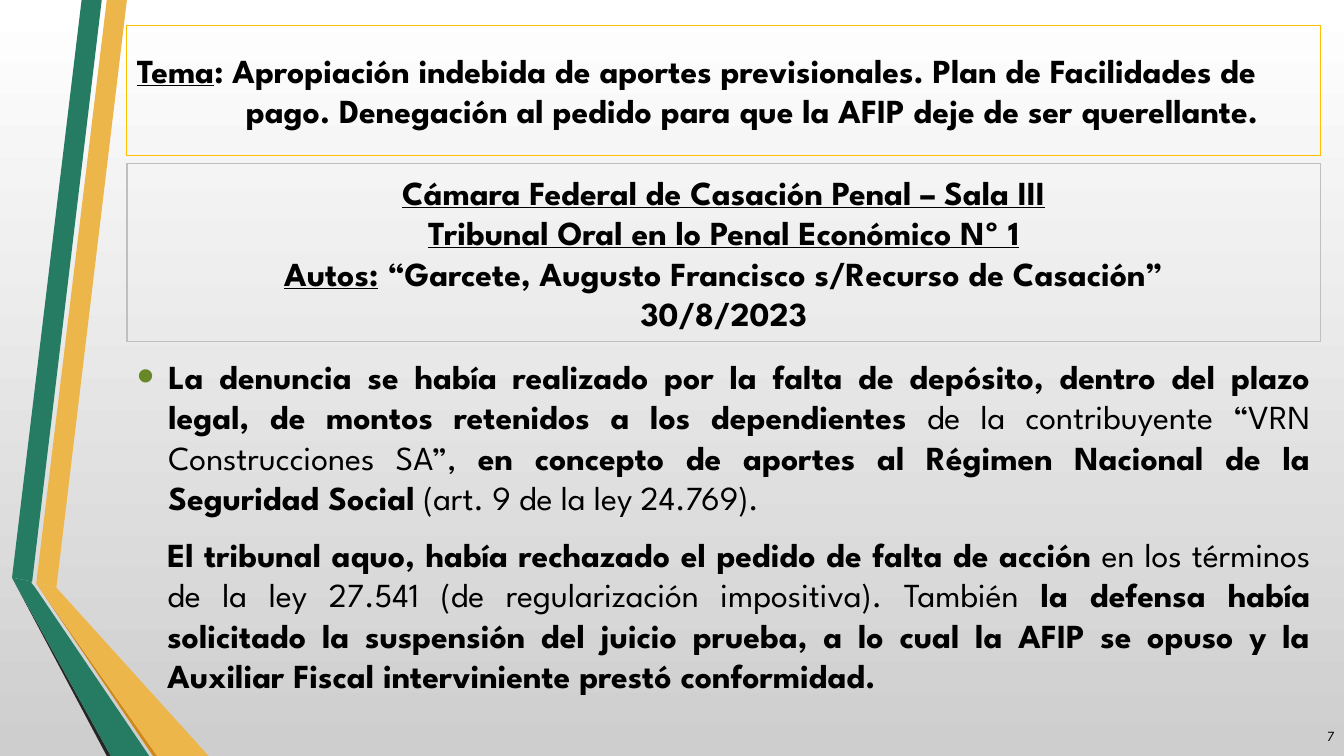
"""Build the court ruling slide with its side ribbons, topic, case heading and facts."""
from lxml import etree
from pptx import Presentation
from pptx.dml.color import RGBColor
from pptx.enum import shapes, text
from pptx.oxml import ns
from pptx.util import Pt

FONT = "League Spartan"
BLACK, AMBER, GREEN = "000000", "ECB64A", "267C62"
BACKGROUND = ["FFFFFF", "CECECE"]
LEFT, WIDTH = 90.7, 852.5

TOPIC = [[
    ("Tema", "bu"),
    (": Apropiación indebida de aportes previsionales. Plan de Facilidades de pago. "
     "Denegación al pedido para que la AFIP deje de ser querellante.", "b"),
]]
CASE = [
    [("Cámara Federal de Casación Penal – Sala III", "bu")],
    [("Tribunal Oral en lo Penal Económico Nº 1", "bu")],
    [("Autos:", "bu"), (" “Garcete, Augusto Francisco s/Recurso de Casación”", "b")],
    [("30/8/2023", "b")],
]
FACTS = [
    [("La denuncia se había realizado por la falta de depósito, dentro del plazo legal, "
      "de montos retenidos a los dependientes", "b"),
     (" de la contribuyente “VRN Construcciones SA”, ", ""),
     ("en concepto de aportes al Régimen Nacional de la Seguridad Social", "b"),
     (" (art. 9 de la ley 24.769).", "")],
    [("El tribunal aquo, había rechazado el pedido de falta de acción", "b"),
     (" en los términos de la ley 27.541 (de regularización impositiva). También ", ""),
     ("la defensa había solicitado la suspensión del juicio prueba, a lo cual la AFIP "
      "se opuso y la Auxiliar Fiscal interviniente prestó conformidad.", "b")],
]
PAGE = [[("7", "")]]

RIBBONS = [
    (AMBER, [(26, 416.2), (40.3, 419.8), (90.7, 0), (76.3, 0)]),
    (GREEN, [(72.7, 0), (58.3, 0), (8.6, 412.6), (23, 415.4)]),
    ("262626", [(8.6, 412.6), (76.3, 540), (79.2, 540)]),
    ("D18817", [(26, 416.9), (109.4, 540), (112.3, 540)]),
    (AMBER, [(26, 416.9), (112.3, 540), (149, 540), (40.3, 419.8), (26, 416.2)]),
    (GREEN, [(106.6, 540), (25.2, 419.8), (22.3, 416.2), (23, 415.4),
             (8.6, 412.6), (79.2, 540)]),
]


def color(value):
    return RGBColor.from_string(value)


def place(part, left, top, width, height):
    part.left, part.top, part.width, part.height = map(Pt, (left, top, width, height))


def write(part, paragraphs, align, anchor, size=24):
    frame = part.text_frame
    frame.word_wrap = True
    frame.auto_size = text.MSO_AUTO_SIZE.NONE
    frame.vertical_anchor = anchor
    for number, pieces in enumerate(paragraphs):
        paragraph = frame.add_paragraph() if number else frame.paragraphs[0]
        paragraph.alignment = align
        paragraph.space_before = Pt(0)
        for words, style in pieces:
            run = paragraph.add_run()
            run.text = words
            run.font.name, run.font.size = FONT, Pt(size)
            run.font.bold, run.font.underline = "b" in style, "u" in style
            run.font.color.rgb = color(BLACK)
    return frame.paragraphs


def indent(paragraph, margin, first):
    properties = paragraph._p.get_or_add_pPr()
    properties.set("marL", str(Pt(margin)))
    properties.set("indent", str(Pt(first)))
    return properties


def add(parent, tag, **attributes):
    return etree.SubElement(parent, ns.qn(tag), attributes)


def outline(part, value):
    part.line.color.rgb = color(value)
    part.line.width = Pt(0.75)


def main():
    prs = Presentation()
    prs.slide_width, prs.slide_height = Pt(960), Pt(540)
    slide = prs.slides.add_slide(prs.slide_layouts[1])
    backdrop = slide.background.fill
    backdrop.gradient()
    backdrop.gradient_angle = 270
    for position, (stop, value) in enumerate(zip(backdrop.gradient_stops, BACKGROUND)):
        stop.position, stop.color.rgb = position, color(value)

    case, facts = slide.placeholders
    for value, points in RIBBONS:
        corners = [(Pt(x), Pt(y)) for x, y in points]
        builder = slide.shapes.build_freeform(*corners[0])
        builder.add_line_segments(corners[1:])
        ribbon = builder.convert_to_shape()
        ribbon.shadow.inherit = False
        ribbon.fill.solid()
        ribbon.fill.fore_color.rgb = color(value)
        ribbon.line.fill.background()
        case._element.addprevious(ribbon._element)

    place(case, LEFT, 116.6, WIDTH, 127.4)
    outline(case, "BFBFBF")
    write(case, CASE, text.PP_ALIGN.CENTER, text.MSO_ANCHOR.MIDDLE)

    place(facts, LEFT, 250.6, WIDTH, 260.6)
    complaint, ruling = write(facts, FACTS, text.PP_ALIGN.JUSTIFY, text.MSO_ANCHOR.TOP)
    complaint.space_after = ruling.space_after = Pt(12)
    bullet = indent(complaint, 22.3, -22.3)
    add(add(bullet, "a:buClr"), "a:srgbClr", val="688727")
    add(bullet, "a:buSzPct", val="145000")
    add(bullet, "a:buFont", typeface="Arial")
    add(bullet, "a:buChar", char="•")
    add(indent(ruling, 21.6, 0), "a:buNone")

    page = slide.shapes.add_textbox(Pt(917.3), Pt(511.2), Pt(43.2), Pt(28.8))
    write(page, PAGE, text.PP_ALIGN.RIGHT, text.MSO_ANCHOR.MIDDLE, 10)

    topic = slide.shapes.add_shape(
        shapes.MSO_SHAPE.RECTANGLE, Pt(LEFT), Pt(18), Pt(WIDTH), Pt(92.9))
    topic.shadow.inherit = False
    topic.fill.background()
    outline(topic, "FFC000")
    heading = write(topic, TOPIC, text.PP_ALIGN.LEFT, text.MSO_ANCHOR.MIDDLE)[0]
    indent(heading, 77.8, -77.8)
    prs.save("out.pptx")


if __name__ == "__main__":
    main()
